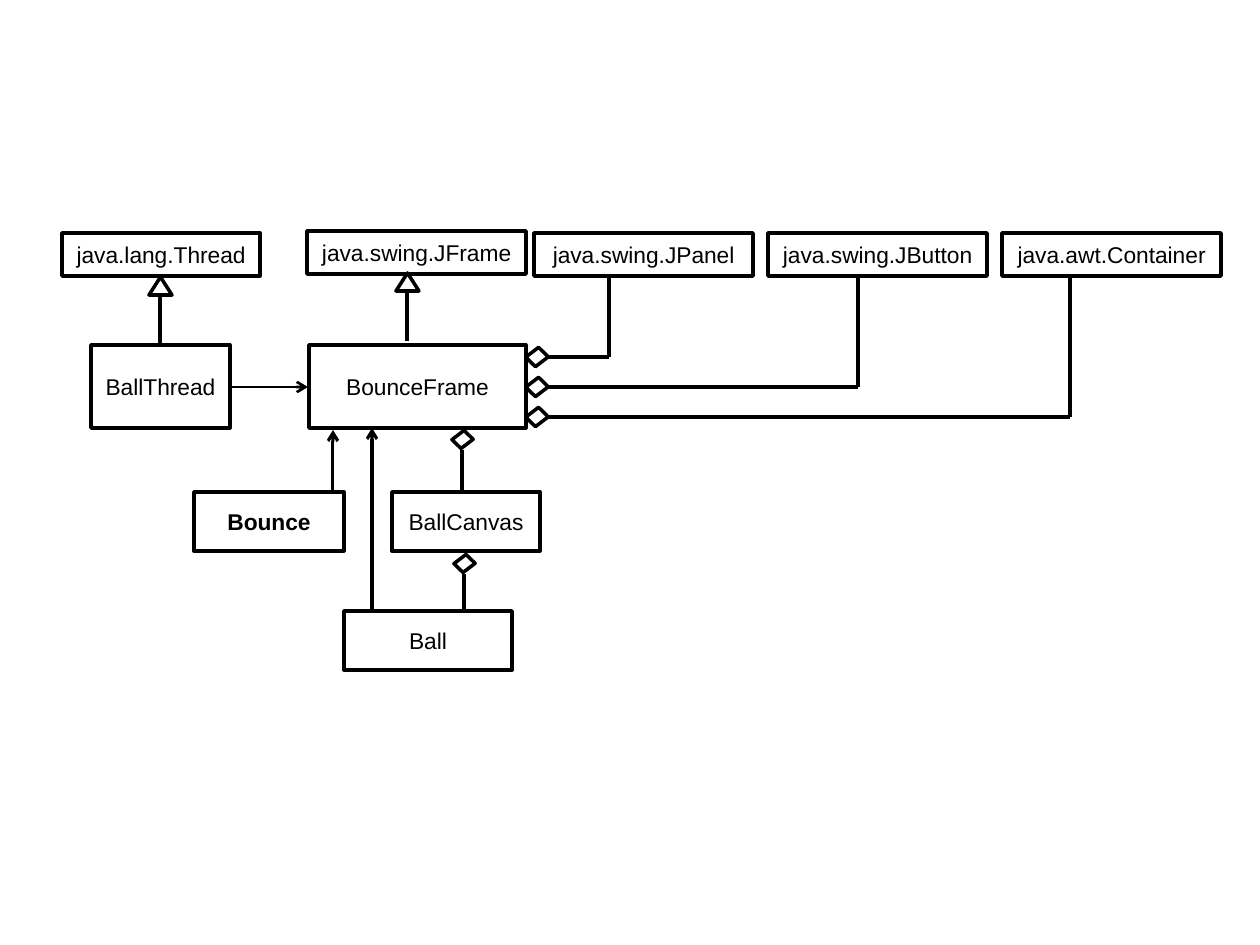
from pptx import Presentation
from pptx.dml.color import RGBColor
from pptx.enum.shapes import MSO_CONNECTOR, MSO_SHAPE
from pptx.enum.text import MSO_ANCHOR, PP_ALIGN
from pptx.oxml.ns import qn
from pptx.util import Emu, Pt
from lxml.etree import SubElement

COLORS = {"ink": "000000", "paper": "FFFFFF"}
SCALE = 914400 / 126


def px(n):
    """Turn px into EMU."""
    return Emu(round(n * SCALE))


def rgb(name):
    """Look up a named colour."""
    return RGBColor.from_string(COLORS[name])


def add_outline(s, kind, x, y, w, h):
    """Add a white preset shape with a black outline."""
    sp = s.shapes.add_shape(kind, px(x), px(y), px(w), px(h))
    sp.shadow.inherit = False
    sp.fill.solid()
    sp.fill.fore_color.rgb = rgb("paper")
    sp.line.color.rgb = rgb("ink")
    sp.line.width = Pt(2)
    return sp


def add_class(s, name, x, y, w, h, bold=False):
    """Add a class box with its centred name."""
    tf = add_outline(s, MSO_SHAPE.RECTANGLE, x, y, w, h).text_frame
    tf.margin_left = tf.margin_right = 0
    tf.word_wrap = True
    tf.vertical_anchor = MSO_ANCHOR.MIDDLE
    p = tf.paragraphs[0]
    p.text = name
    p.alignment = PP_ALIGN.CENTER
    p.font.name = "Arial"
    p.font.size = Pt(13)
    p.font.bold = bold
    p.font.color.rgb = rgb("ink")


def add_line(s, x1, y1, x2, y2, width=2, arrow=False):
    """Add a straight line, with an open arrowhead at its end if asked."""
    c = s.shapes.add_connector(MSO_CONNECTOR.STRAIGHT, px(x1), px(y1), px(x2), px(y2))
    c.line.color.rgb = rgb("ink")
    c.line.width = Pt(width)
    if arrow:
        SubElement(c.line._get_or_add_ln(), qn("a:tailEnd"), type="arrow")
    SubElement(c._element.spPr, qn("a:effectLst"))


def add_diamond(s, x, y, size):
    """Add an aggregation diamond as a turned parallelogram."""
    sp = add_outline(s, MSO_SHAPE.PARALLELOGRAM, x, y, size, size)
    sp.adjustments[0] = 0.15
    sp.rotation = 44


def add_inheritance(s, x, y):
    """Add a hollow triangle at the parent's edge and the line below it."""
    add_outline(s, MSO_SHAPE.ISOSCELES_TRIANGLE, x - 11, y, 23, 18)
    add_line(s, x, y + 18, x, y + 68)


def add_side_aggregation(s, x, y):
    """Join a class in the top row to the right side of BounceFrame."""
    add_diamond(s, 529, y - 8, 16)
    add_line(s, x, 276, x, y)
    add_line(s, x, y, 547, y)


def add_lower_aggregation(s, x, y):
    """Join a class to the one below it."""
    add_diamond(s, x - 7, y, 15)
    add_line(s, x, y + 18, x, y + 60)


def main():
    """Build the class diagram."""
    prs = Presentation()
    prs.slide_width, prs.slide_height = px(1260), px(945)
    s = prs.slides.add_slide(prs.slide_layouts[6])

    add_class(s, "java.lang.Thread", 62, 233, 198, 43)
    add_class(s, "java.swing.JFrame", 307, 231, 219, 43)
    parts = ["java.swing.JPanel", "java.swing.JButton", "java.awt.Container"]
    for i, (name, x) in enumerate(zip(parts, (609, 858, 1070))):
        add_class(s, name, 534 + 234 * i, 233, 219, 43)
        add_side_aggregation(s, x, 357 + 30 * i)
    add_inheritance(s, 160, 277)
    add_inheritance(s, 407, 273)

    add_line(s, 230, 387, 308, 387, 1.5, arrow=True)
    add_class(s, "BallThread", 91, 345, 139, 83)
    add_class(s, "BounceFrame", 309, 345, 217, 83)
    add_lower_aggregation(s, 462, 432)
    add_lower_aggregation(s, 464, 556)
    add_class(s, "Bounce", 194, 492, 150, 59, bold=True)
    add_class(s, "BallCanvas", 392, 492, 148, 59)
    add_class(s, "Ball", 344, 611, 168, 59)
    add_line(s, 333, 492, 333, 430, 1.75, arrow=True)
    add_line(s, 372, 611, 372, 428, 1.75, arrow=True)

    prs.save("out.pptx")


if __name__ == "__main__":
    main()
